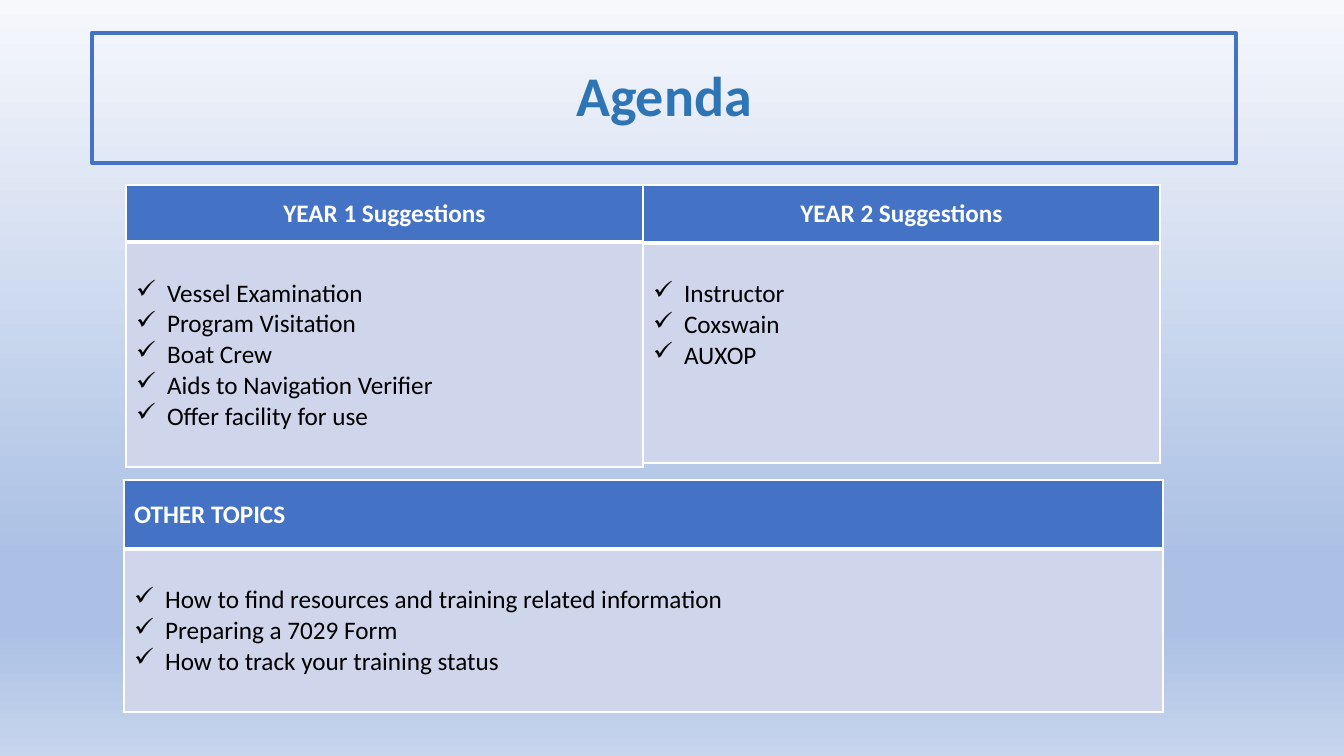
from dataclasses import dataclass

from lxml import etree
from pptx import Presentation
from pptx.dml.color import RGBColor
from pptx.enum.shapes import MSO_SHAPE
from pptx.enum.text import MSO_ANCHOR, PP_ALIGN
from pptx.oxml.ns import qn
from pptx.util import Emu, Pt

RECTANGLE = MSO_SHAPE.RECTANGLE
MIDDLE, TOP = MSO_ANCHOR.MIDDLE, MSO_ANCHOR.TOP
CENTER, LEFT = PP_ALIGN.CENTER, PP_ALIGN.LEFT
EMU_PER_PX = 914400 / 100.8


@dataclass(frozen=True)
class Theme:
    """Colours, font and sizes of the agenda."""
    font: str = "Calibri"
    accent: str = "4472C4"
    title: str = "2E75B6"
    panel: str = "CFD5EA"
    white: str = "FFFFFF"
    black: str = "000000"
    background: tuple = ((0, "F6F8FC"), (74, "ABC0E4"), (83, "ABC0E4"), (100, "C7D5ED"))
    title_size: int = 40
    body_size: int = 18
    frame_width: int = 3
    thin: int = 1
    thick: int = 3


THEME = Theme()


def px(length):
    """Turn pixels into EMU."""
    return Emu(round(length * EMU_PER_PX))


def add_run(paragraph, text, size, color, bold=False):
    """Append one formatted run to a paragraph."""
    run = paragraph.add_run()
    run.text = text
    run.font.name = THEME.font
    run.font.size = Pt(size)
    run.font.bold = bold
    run.font.color.rgb = RGBColor.from_string(color)


def paint_background(slide):
    """Fill the slide with the vertical gradient."""
    fill = slide.background.fill
    fill.gradient()
    fill.gradient_angle = 270
    stops = slide.element.find(".//" + qn("a:gsLst"))
    for old_stop in list(stops):
        stops.remove(old_stop)
    for percent, color in THEME.background:
        stop = etree.SubElement(stops, qn("a:gs"), pos=str(percent * 1000))
        etree.SubElement(stop, qn("a:srgbClr"), val=color)


def add_title(slide, text, left, top, width, height):
    """Draw the framed slide title."""
    frame = slide.shapes.add_shape(RECTANGLE, px(left), px(top), px(width), px(height))
    frame.shadow.inherit = False
    frame.fill.background()
    frame.line.color.rgb = RGBColor.from_string(THEME.accent)
    frame.line.width = Pt(THEME.frame_width)
    frame.text_frame.word_wrap = True
    frame.text_frame.vertical_anchor = MIDDLE
    heading = frame.text_frame.paragraphs[0]
    heading.alignment = CENTER
    heading.line_spacing = 0.9
    add_run(heading, text, THEME.title_size, THEME.title, bold=True)


def style_cell(cell, fill, anchor, top_width, bottom_width):
    """Set the fill, anchor and white borders of a cell."""
    cell.fill.solid()
    cell.fill.fore_color.rgb = RGBColor.from_string(fill)
    cell.vertical_anchor = anchor
    properties = cell._tc.get_or_add_tcPr()
    widths = {"a:lnL": THEME.thin, "a:lnR": THEME.thin, "a:lnT": top_width, "a:lnB": bottom_width}
    for position, (side, width) in enumerate(widths.items()):
        border = etree.Element(qn(side), w=str(Pt(width)))
        solid = etree.SubElement(border, qn("a:solidFill"))
        etree.SubElement(solid, qn("a:srgbClr"), val=THEME.white)
        properties.insert(position, border)


def add_check_item(paragraph, text):
    """Write one item with a check mark bullet."""
    properties = paragraph._p.get_or_add_pPr()
    properties.set("marL", str(px(31)))
    properties.set("indent", str(-px(31)))
    etree.SubElement(properties, qn("a:buChar"), char="✓")
    add_run(paragraph, text, THEME.body_size, THEME.black)


def add_topic_table(slide, heading, items, left, top, width, row_heights, align=CENTER):
    """Add a table with a heading row above a checklist."""
    table = slide.shapes.add_table(
        2, 1, px(left), px(top), px(width), px(sum(row_heights))).table
    table.horz_banding = False
    for row, height in zip(table.rows, row_heights):
        row.height = px(height)

    header, checklist = table.cell(0, 0), table.cell(1, 0)
    style_cell(header, THEME.accent, MIDDLE, THEME.thin, THEME.thick)
    title = header.text_frame.paragraphs[0]
    title.alignment = align
    add_run(title, heading, THEME.body_size, THEME.white, bold=True)

    style_cell(checklist, THEME.panel, TOP, THEME.thick, THEME.thin)
    checklist.margin_top = px(36)
    for index, item in enumerate(items):
        frame = checklist.text_frame
        add_check_item(frame.add_paragraph() if index else frame.paragraphs[0], item)


def main():
    """Build the agenda slide."""
    deck = Presentation()
    deck.slide_width, deck.slide_height = px(1344), px(756)
    slide = deck.slides.add_slide(deck.slide_layouts[6])
    paint_background(slide)
    add_title(slide, "Agenda", 92, 33, 1144, 130)
    add_topic_table(
        slide, "YEAR 1 Suggestions",
        ["Vessel Examination", "Program Visitation", "Boat Crew",
         "Aids to Navigation Verifier", "Offer facility for use"],
        126, 185, 517, (57, 225))
    add_topic_table(
        slide, "YEAR 2 Suggestions", ["Instructor", "Coxswain", "AUXOP"],
        643, 185, 517, (58, 220))
    add_topic_table(
        slide, "OTHER TOPICS",
        ["How to find resources and training related information",
         "Preparing a 7029 Form", "How to track your training status"],
        124, 480, 1039, (69, 163), LEFT)
    deck.save("out.pptx")


if __name__ == "__main__":
    main()
